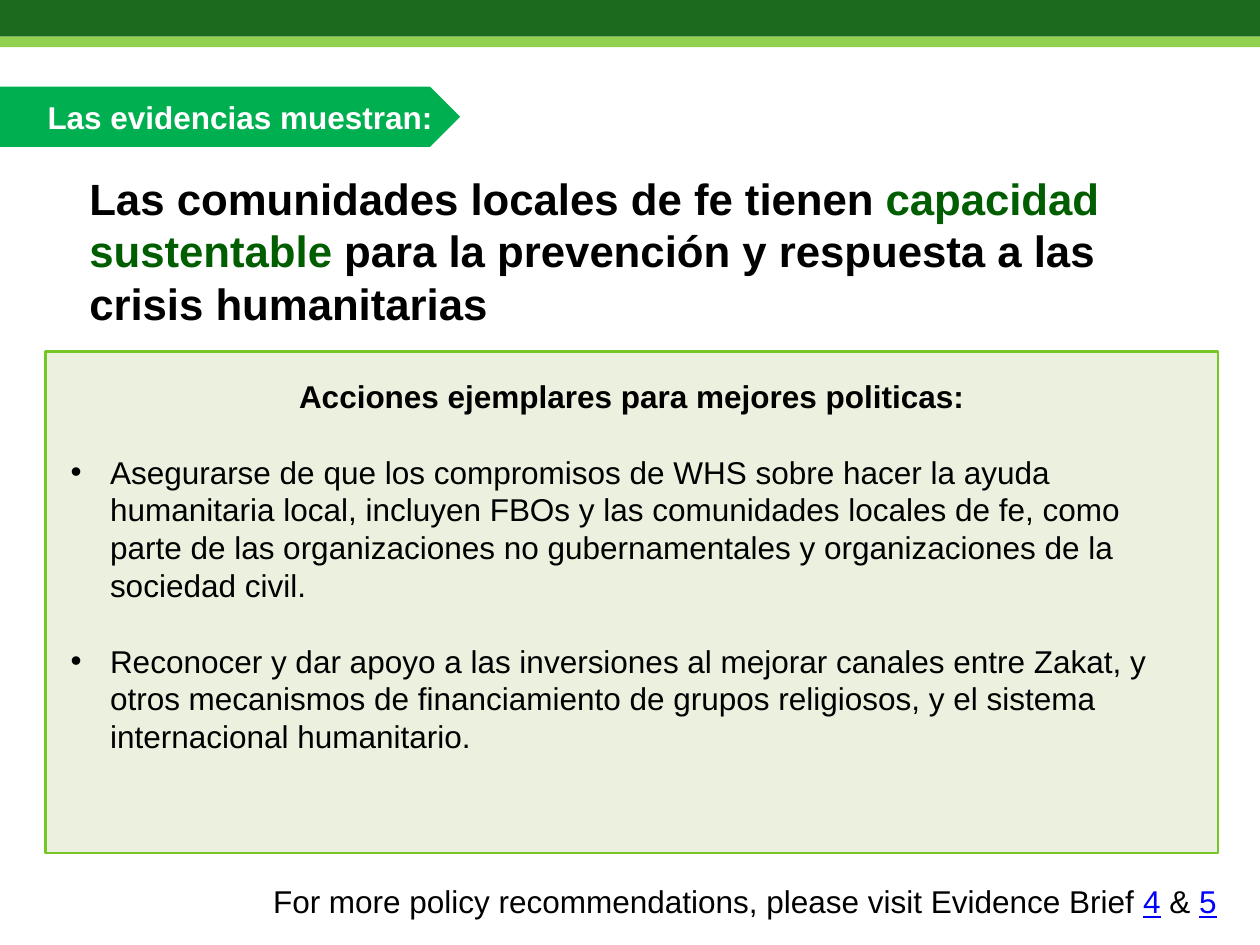
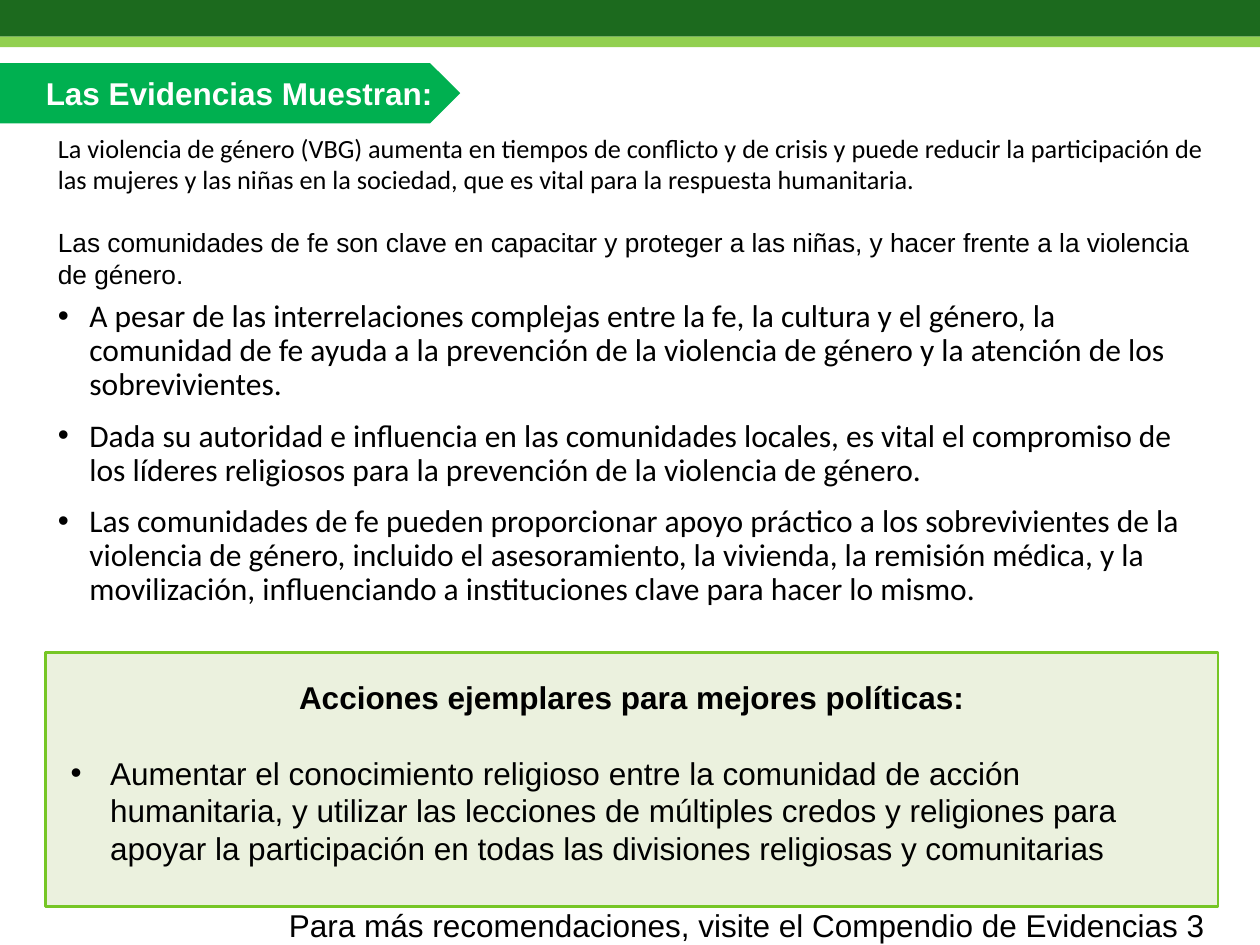
from dataclasses import dataclass, field
from typing import Any, NamedTuple

from lxml import etree
from pptx import Presentation
from pptx.dml.color import RGBColor
from pptx.enum.shapes import MSO_SHAPE
from pptx.enum.text import MSO_ANCHOR, PP_ALIGN
from pptx.oxml.ns import qn
from pptx.util import Pt

RECT, TAG = MSO_SHAPE.RECTANGLE, MSO_SHAPE.PENTAGON
TOP, MIDDLE = MSO_ANCHOR.TOP, MSO_ANCHOR.MIDDLE
CENTER, RIGHT = PP_ALIGN.CENTER, PP_ALIGN.RIGHT

WHITE = RGBColor(0xFF, 0xFF, 0xFF)
BLACK = RGBColor(0x00, 0x00, 0x00)
BLUE = RGBColor(0x00, 0x00, 0xFF)
FOREST = RGBColor(0x1C, 0x6A, 0x1E)
LIME = RGBColor(0x92, 0xD0, 0x50)
GREEN = RGBColor(0x00, 0xB0, 0x50)
DEEP = RGBColor(0x00, 0x5D, 0x00)
PALE = RGBColor(0xEB, 0xF1, 0xDE)
EDGE = RGBColor(0x76, 0xC6, 0x25)

WIDTH, HEIGHT = 720, 540
LEFT = 26
PITCH = Pt(21.6)  # line height of 18 point Arial text


class Frame(NamedTuple):
    left: float
    top: float
    width: float
    height: float


class Inset(NamedTuple):
    left: float = 7.2
    top: float = 3.6
    right: float = 7.2
    bottom: float = 3.6


@dataclass
class Run:
    text: str
    color: RGBColor = BLACK
    font: dict[str, Any] = field(default_factory=dict)


@dataclass
class Para:
    runs: list[Run]
    font: dict[str, Any] = field(default_factory=dict)
    form: dict[str, Any] = field(default_factory=dict)
    indent: float = 0  # a hanging indent brings a bullet


BASE = {"name": "Arial", "size": Pt(18), "bold": False}
BOLD = {"bold": True}
LINK = {"underline": True}
BANDS = [(Frame(0, 0, WIDTH, 21), FOREST), (Frame(0, 21, WIDTH, 6), LIME)]
PAD = Inset(14.4, 14.4, 14.4, 3.6)


def assign(target: Any, values: dict[str, Any]) -> None:
    for name, value in values.items():
        setattr(target, name, value)


def points(frame: Frame) -> list[Pt]:
    return [Pt(n) for n in frame]


def bullet(para: Any, indent: float) -> None:
    props = para._p.get_or_add_pPr()
    props.set("marL", str(Pt(indent)))
    props.set("indent", str(-Pt(indent)))
    etree.SubElement(props, qn("a:buFont")).set("typeface", "Arial")
    etree.SubElement(props, qn("a:buChar")).set("char", "•")


def write(shape: Any, paras: list[Para], inset: Inset = Inset(),
          anchor: Any = TOP, wrap: bool = True) -> None:
    frame = shape.text_frame
    assign(frame, {"word_wrap": wrap, "vertical_anchor": anchor})
    assign(frame, {f"margin_{side}": Pt(n) for side, n in inset._asdict().items()})
    for i, item in enumerate(paras):
        para = frame.add_paragraph() if i else frame.paragraphs[0]
        assign(para, {"alignment": PP_ALIGN.LEFT} | item.form)
        if item.indent:
            bullet(para, item.indent)
        for part in item.runs:
            run = para.add_run()
            run.text = part.text
            assign(run.font, BASE | item.font | part.font)
            run.font.color.rgb = part.color


def block(slide: Any, kind: Any, frame: Frame, fill: RGBColor,
          edge: RGBColor | None = None) -> Any:
    shape = slide.shapes.add_shape(kind, *points(frame))
    shape.shadow.inherit = False
    shape.fill.solid()
    shape.fill.fore_color.rgb = fill
    if edge is None:
        shape.line.fill.background()
    else:
        shape.line.color.rgb = edge
        shape.line.width = Pt(1.5)
    return shape


def label(slide: Any, frame: Frame, paras: list[Para], wrap: bool = True) -> None:
    write(slide.shapes.add_textbox(*points(frame)), paras, wrap=wrap)


def start(deck: Any, top: float, text: str) -> Any:
    """Add a slide with its two bands and the arrow tag."""
    slide = deck.slides.add_slide(deck.slide_layouts[6])
    for frame, fill in BANDS:
        block(slide, RECT, frame, fill)
    tag = block(slide, TAG, Frame(0, top, 263, 34.5), GREEN)
    write(tag, [Para([Run(text, WHITE)], BOLD, {"alignment": RIGHT})], anchor=MIDDLE)
    return slide


def panel(slide: Any, top: float, height: float, head: str, items: list[str]) -> None:
    """Draw the pale box of actions, with one line of space between items."""
    form = {"line_spacing": PITCH, "space_after": PITCH}
    paras = [Para([Run(head)], BOLD, form | {"alignment": CENTER})]
    paras += [Para([Run(item)], form=form, indent=22.5) for item in items]
    write(block(slide, RECT, Frame(LEFT, top, 670, height), PALE, EDGE), paras, PAD)


def sustain(deck: Any) -> None:
    slide = start(deck, 49.5, "Las evidencias muestran:")
    title = [
        Run("Las comunidades locales de fe tienen "),
        Run("capacidad sustentable", DEEP),
        Run(" para la prevención y respuesta a las crisis humanitarias"),
    ]
    label(slide, Frame(44, 94.5, 654, 86),
          [Para(title, BOLD | {"size": Pt(25)}, {"line_spacing": Pt(30)})])
    panel(slide, 201, 286.5, "Acciones ejemplares para mejores politicas:", [
        "Asegurarse de que los compromisos de WHS sobre hacer la ayuda humanitaria "
        "local, incluyen FBOs y las comunidades locales de fe, como parte de las "
        "organizaciones no gubernamentales y organizaciones de la sociedad civil.",
        "Reconocer y dar apoyo a las inversiones al mejorar canales entre Zakat, y "
        "otros mecanismos de financiamiento de grupos religiosos, y el sistema "
        "internacional humanitario.",
    ])
    note = [
        Run("For more policy recommendations, please visit Evidence Brief "),
        Run("4", BLUE, LINK),
        Run(" & "),
        Run("5", BLUE, LINK),
    ]
    label(slide, Frame(149, 500.5, 559, 29), [Para(note)], wrap=False)


def protect(deck: Any) -> None:
    slide = start(deck, 36, "Las Evidencias Muestran:")
    points_made = [
        "A pesar de las interrelaciones complejas entre la fe, la cultura y el género, "
        "la comunidad de fe ayuda a la prevención de la violencia de género y la "
        "atención de los sobrevivientes.",
        "Dada su autoridad e influencia en las comunidades locales, es vital el "
        "compromiso de los líderes religiosos para la prevención de la violencia de "
        "género.",
        "Las comunidades de fe pueden proporcionar apoyo práctico a los sobrevivientes "
        "de la violencia de género, incluido el asesoramiento, la vivienda, la remisión "
        "médica, y la movilización, influenciando a instituciones clave para hacer lo "
        "mismo.",
    ]
    form = {"line_spacing": 0.9, "space_before": Pt(10)}
    label(slide, Frame(LEFT, 168, 658, 205),
          [Para([Run(text)], {"name": "Calibri"}, form, 18) for text in points_made])
    small = {"size": Pt(15)}
    label(slide, Frame(LEFT, 72, 675, 98), [
        Para([Run("La violencia de género (VBG) aumenta en tiempos de conflicto y de "
                  "crisis y puede reducir la participación de las mujeres y las niñas "
                  "en la sociedad, que es vital para la respuesta humanitaria.")],
             small | {"name": "Calibri"}, {"space_after": Pt(18)}),
        Para([Run("Las comunidades de fe son clave en capacitar y proteger a las niñas, "
                  "y hacer frente a la violencia de género.")],
             small, {"line_spacing": Pt(18)}),
    ])
    panel(slide, 373, 145, "Acciones ejemplares para mejores políticas:", [
        "Aumentar el conocimiento religioso entre la comunidad de acción humanitaria, "
        "y utilizar las lecciones de múltiples credos y religiones para apoyar la "
        "participación en todas las divisiones religiosas y comunitarias",
    ])
    label(slide, Frame(158, 514, 557, 26), [
        Para([Run("Para más recomendaciones, visite el Compendio de Evidencias 3")])])


def main() -> None:
    deck = Presentation()
    assign(deck, {"slide_width": Pt(WIDTH), "slide_height": Pt(HEIGHT)})
    sustain(deck)
    protect(deck)
    deck.save("out.pptx")


if __name__ == "__main__":
    main()
